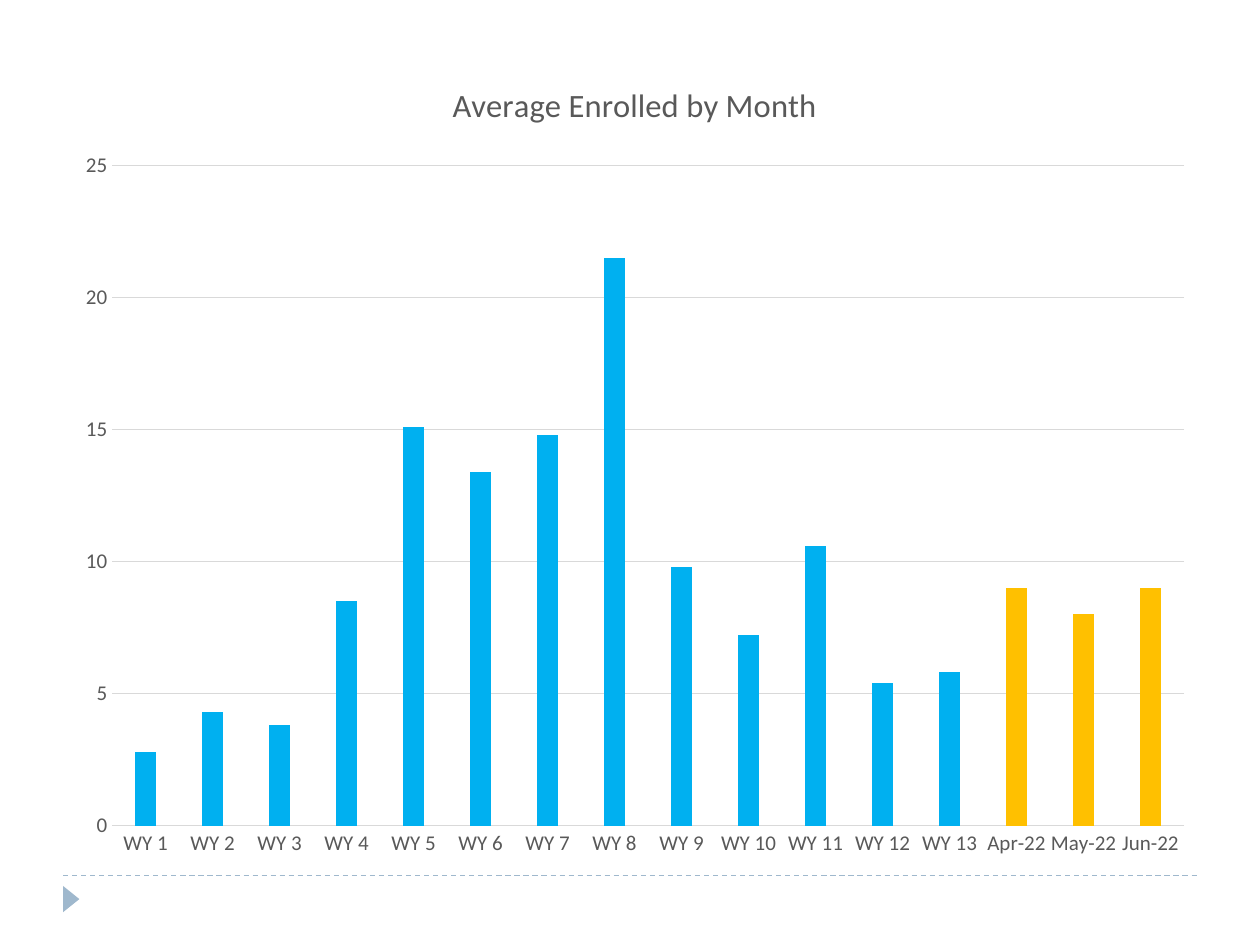
from pptx import Presentation
from pptx.chart.data import CategoryChartData
from pptx.dml.color import RGBColor
from pptx.enum.chart import XL_CHART_TYPE, XL_TICK_MARK
from pptx.enum.dml import MSO_LINE
from pptx.enum.shapes import MSO_CONNECTOR, MSO_SHAPE
from pptx.oxml.ns import qn
from pptx.util import Cm, Pt
from lxml.etree import SubElement

MIST_BLUE = RGBColor(0x9F, 0xB8, 0xCD)
SKY_BLUE = RGBColor(0x00, 0xB0, 0xF0)
AMBER = RGBColor(0xFF, 0xC0, 0x00)
TEXT_GREY = RGBColor(0x59, 0x59, 0x59)
GRID_GREY = RGBColor(0xD9, 0xD9, 0xD9)

WAIVER_YEARS = [2.8, 4.3, 3.8, 8.5, 15.1, 13.4, 14.8, 21.5, 9.8, 7.2, 10.6, 5.4, 5.8]
RECENT_MONTHS = {"Apr-22": 9, "May-22": 8, "Jun-22": 9}


def format_font(font, size=12, color=TEXT_GREY, name="Calibri", bold=False):
    font.size = Pt(size)
    font.name = name
    font.bold = bold
    font.color.rgb = color


def write_text(text_frame, text, **text_format):
    run = text_frame.paragraphs[0].add_run()
    run.text = text
    format_font(run.font, **text_format)


class SlideBuilder:
    line_width = Pt(0.75)

    def __init__(self, slide):
        self.slide = slide

    def style_line(self, line, color):
        line.color.rgb = color
        line.width = self.line_width

    def add_dashed_rule(self, left, right, top):
        connector = self.slide.shapes.add_connector(
            MSO_CONNECTOR.STRAIGHT, Cm(left), Cm(top), Cm(right), Cm(top))
        self.style_line(connector.line, MIST_BLUE)
        connector.line.dash_style = MSO_LINE.DASH
        SubElement(connector._element.spPr, qn("a:effectLst"))

    def add_marker(self, left, top, width, height):
        shape = self.slide.shapes.add_shape(
            MSO_SHAPE.ISOSCELES_TRIANGLE, Cm(left), Cm(top), Cm(width), Cm(height))
        shape.rotation = 90
        shape.shadow.inherit = False
        shape.fill.solid()
        shape.fill.fore_color.rgb = MIST_BLUE
        shape.line.fill.background()

    def add_column_chart(self, title, categories, values, highlighted, left, top, width, height):
        chart_data = CategoryChartData()
        chart_data.categories = categories
        chart_data.add_series("Series 1", values)
        chart = self.slide.shapes.add_chart(
            XL_CHART_TYPE.COLUMN_CLUSTERED, Cm(left), Cm(top), Cm(width), Cm(height),
            chart_data).chart
        format_font(chart.font)
        chart.has_legend = False
        chart.has_title = True
        write_text(chart.chart_title.text_frame, title, size=18.6)
        chart.chart_title.include_in_layout = False

        plot = chart.plots[0]
        plot.gap_width = 219
        plot.overlap = -27
        plot.vary_by_categories = False
        series = plot.series[0]
        series.format.fill.solid()
        series.format.fill.fore_color.rgb = SKY_BLUE
        for index, category in enumerate(categories):
            if category in highlighted:
                fill = series.points[index].format.fill
                fill.solid()
                fill.fore_color.rgb = AMBER

        for axis in (chart.category_axis, chart.value_axis):
            axis.major_tick_mark = XL_TICK_MARK.NONE
            axis.minor_tick_mark = XL_TICK_MARK.NONE
            format_font(axis.tick_labels.font)
        self.style_line(chart.category_axis.format.line, GRID_GREY)
        value_axis = chart.value_axis
        value_axis.minimum_scale = 0
        value_axis.maximum_scale = 25
        value_axis.major_unit = 5
        value_axis.format.line.fill.background()
        value_axis.tick_labels.number_format = "0"
        value_axis.tick_labels.number_format_is_linked = False
        self.style_line(value_axis.major_gridlines.format.line, GRID_GREY)


def main():
    presentation = Presentation()
    presentation.slide_width = Cm(25.4)
    presentation.slide_height = Cm(19.05)
    builder = SlideBuilder(presentation.slides.add_slide(presentation.slide_layouts[6]))
    builder.add_dashed_rule(left=1.27, right=24.13, top=17.65)
    builder.add_marker(left=1.17, top=17.96, width=0.53, height=0.33)
    year_labels = [f"WY {number}" for number in range(1, len(WAIVER_YEARS) + 1)]
    builder.add_column_chart(
        "Average Enrolled by Month",
        year_labels + list(RECENT_MONTHS),
        WAIVER_YEARS + list(RECENT_MONTHS.values()),
        highlighted=RECENT_MONTHS,
        left=1.27, top=1.07, width=23.06, height=16.51)
    presentation.save("out.pptx")


if __name__ == "__main__":
    main()
